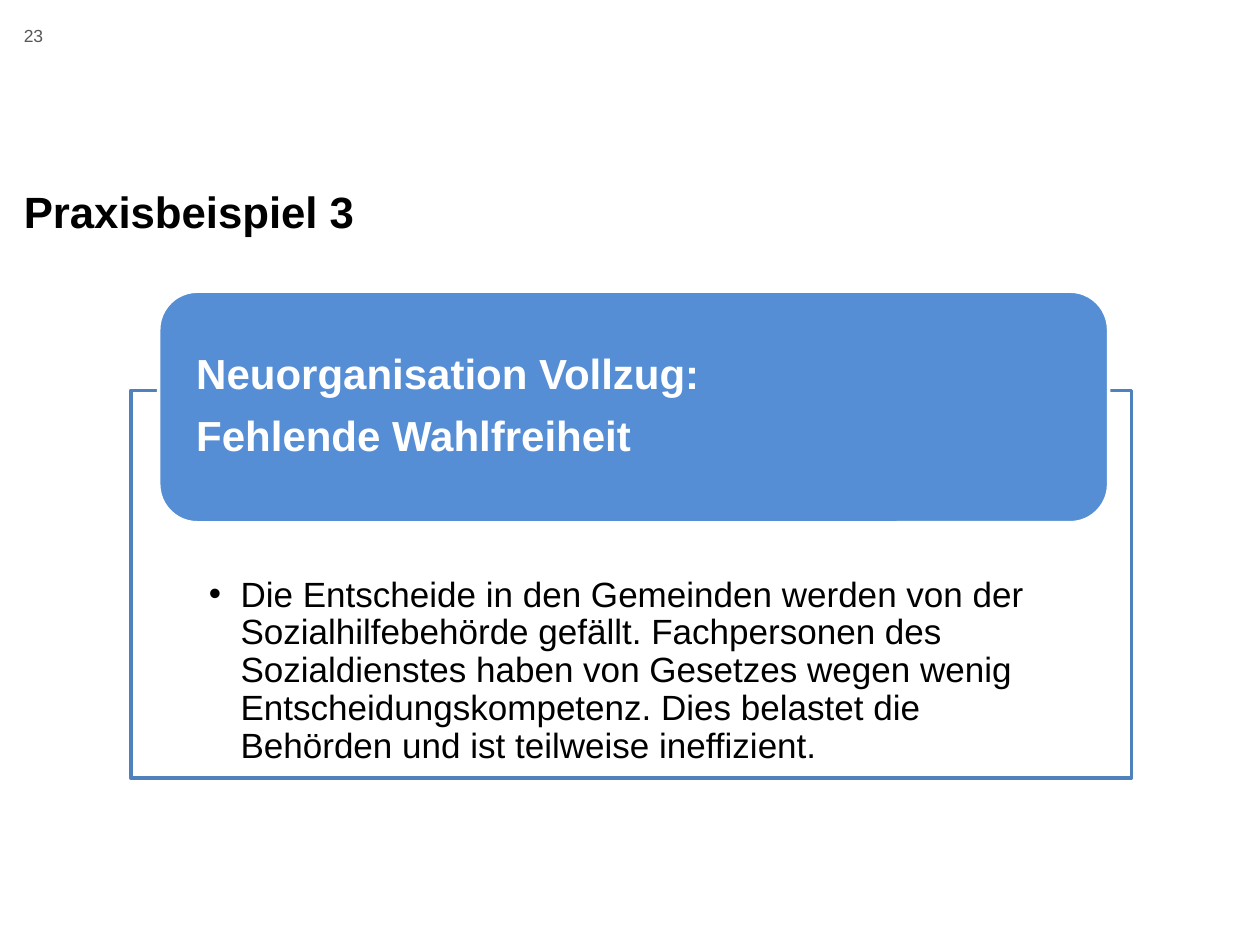
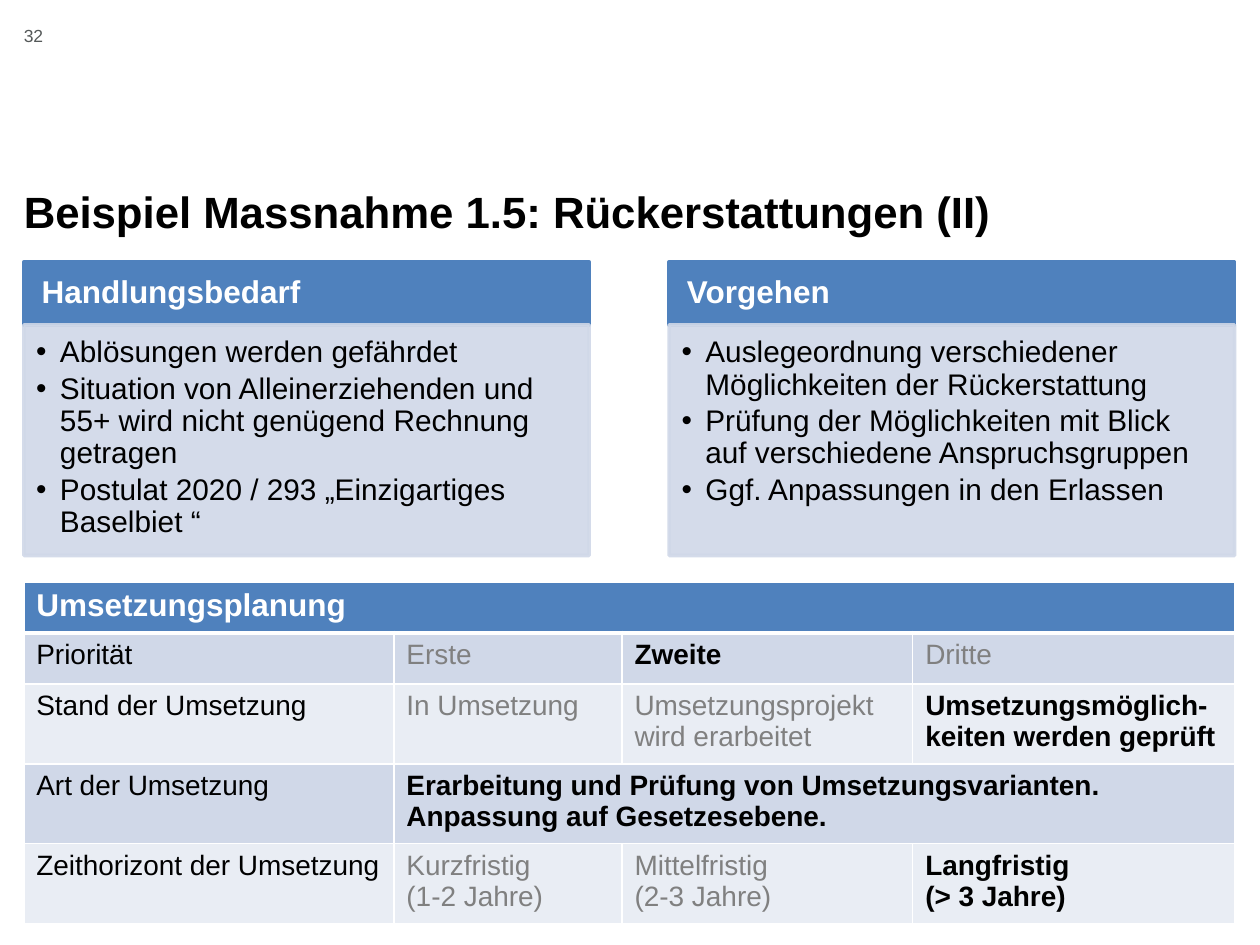
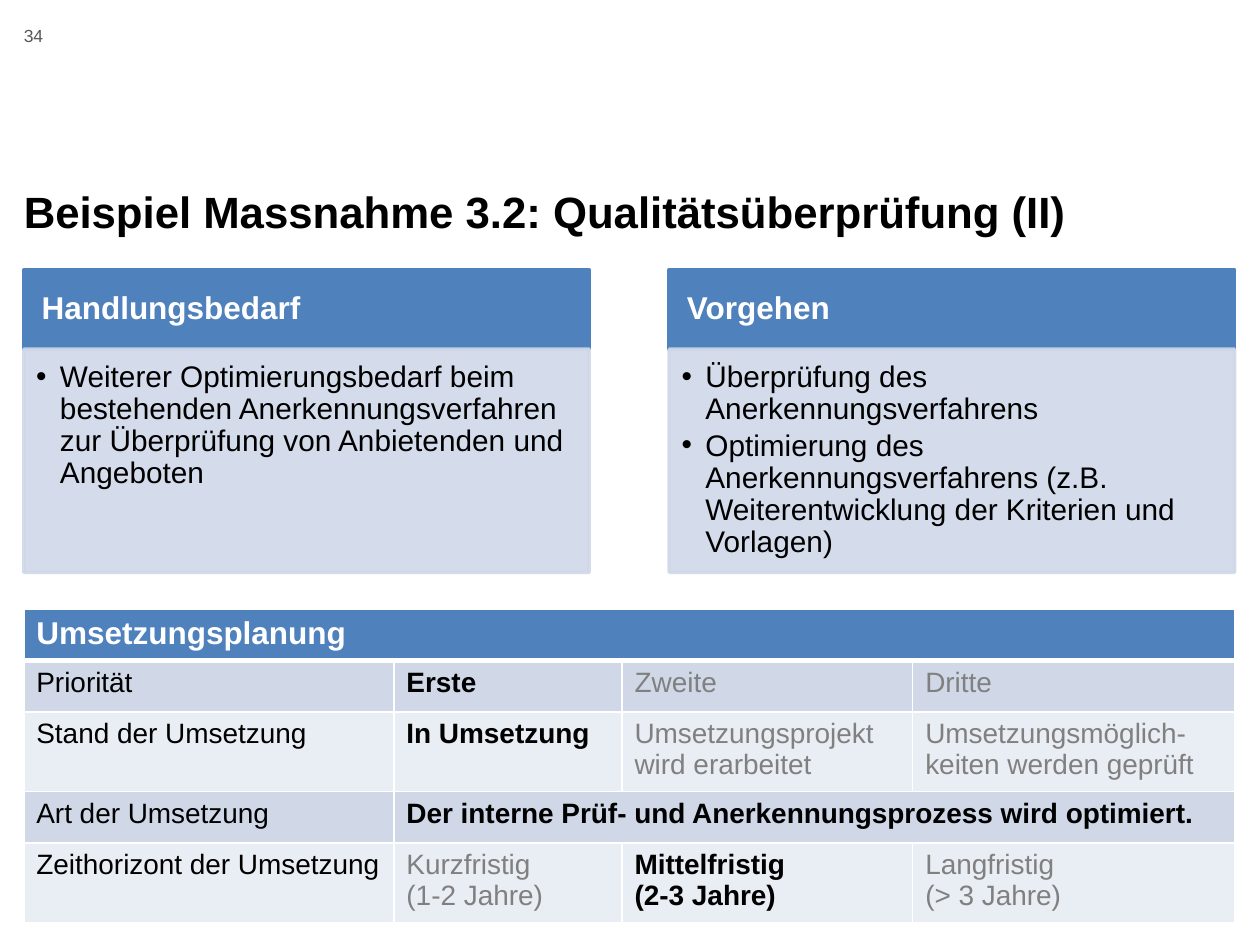
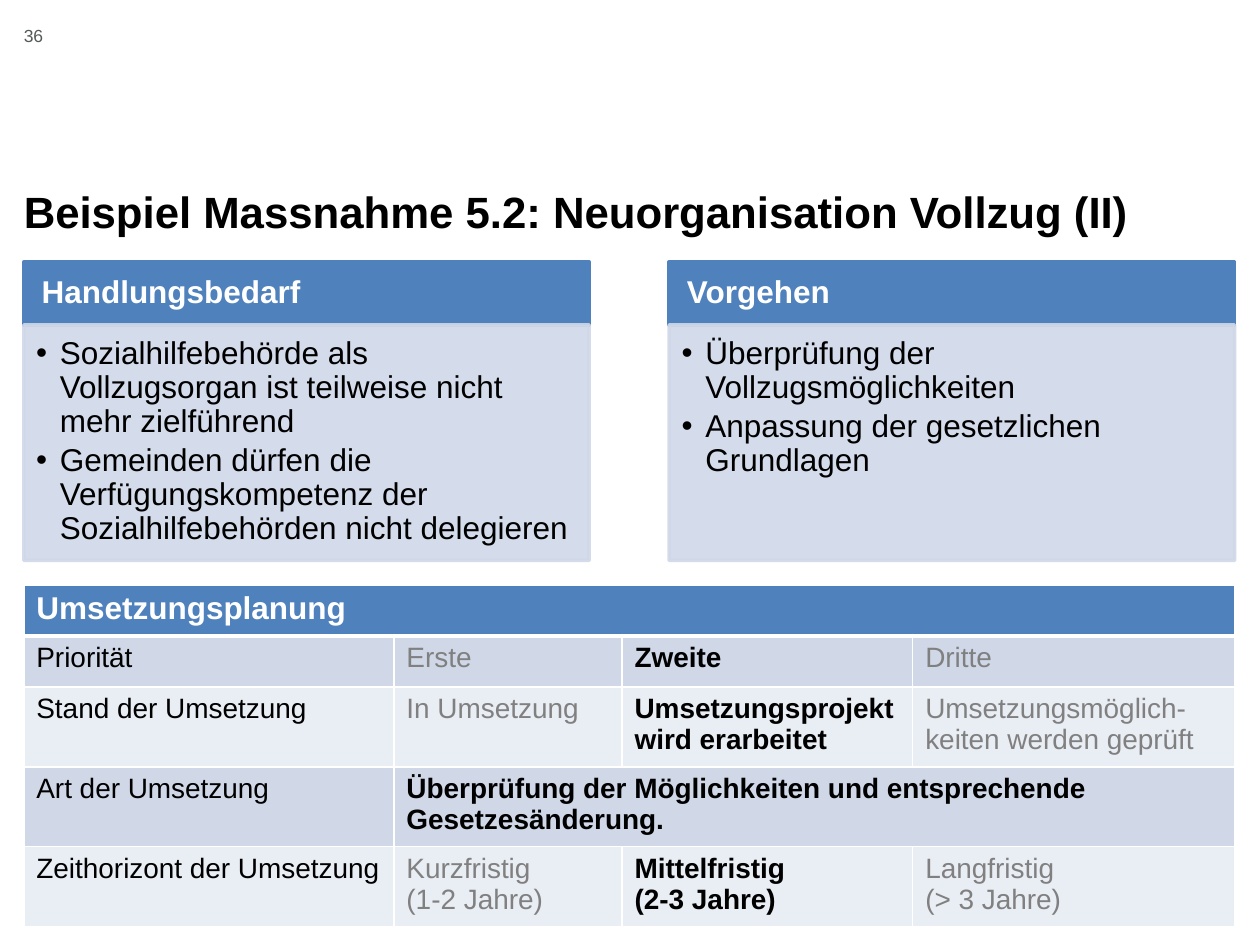
from dataclasses import dataclass
from typing import NamedTuple

from lxml.etree import SubElement
from pptx import Presentation
from pptx.dml.color import RGBColor as RGB
from pptx.enum.shapes import MSO_SHAPE as SHAPE
from pptx.enum.text import MSO_ANCHOR as ANCHOR, PP_ALIGN as ALIGN
from pptx.oxml.ns import qn
from pptx.util import Cm, Pt


@dataclass(frozen=True)
class Theme:
    font: str = "Arial"
    white: str = "FFFFFF"
    black: str = "000000"
    number: str = "555959"
    muted: str = "808080"
    blue: str = "4F81BD"
    bright: str = "558ED5"
    pale: str = "D0D8E8"
    paler: str = "E9EDF4"
    number_size: int = 10
    title_size: int = 25
    topic_size: int = 24
    lead_size: int = 20
    head_size: int = 18
    list_size: int = 17
    cell_size: int = 16
    line: int = 2
    opacity: int = 90


T = Theme()


class Box(NamedTuple):
    x: float
    y: float
    w: float
    h: float

    def emu(self):
        return [Cm(v) for v in self]


NUMBER_BOX = Box(0.48, 0.51, 1.12, 1.02)
TITLE_BOX = Box(0.48, 2.69, 24.41, 2.06)
CONTENT_X, CONTENT_W = TITLE_BOX.x, TITLE_BOX.w
COLUMN_W = 11.4
TABLE_COLS = (7.46, 4.6, 5.86, 6.49)
ROW_H = 1.03
PLAN_ROWS = (
    ("Priorität", ("Erste", "Zweite", "Dritte")),
    ("Stand der Umsetzung", ("In Umsetzung", "Umsetzungsprojekt wird erarbeitet",
                             "Umsetzungsmöglich-keiten werden geprüft")),
    ("Art der Umsetzung", None),
    ("Zeithorizont der Umsetzung", ("Kurzfristig \n(1-2 Jahre)", "Mittelfristig \n(2-3 Jahre)",
                                    "Langfristig \n(> 3 Jahre)")),
)


def set_frame(tf, insets=(0, 0, 0, 0), anchor=ANCHOR.TOP):
    tf.word_wrap = True
    tf.vertical_anchor = anchor
    tf.margin_left, tf.margin_top, tf.margin_right, tf.margin_bottom = map(Cm, insets)


def write(p, text, size, color, bold=False):
    for i, part in enumerate(text.split("\n")):
        if i:
            p.add_line_break()
        r = p.add_run()
        r.text = part
        f = r.font
        f.name, f.size, f.bold = T.font, Pt(size), bold
        f.color.rgb = RGB.from_string(color)


def write_all(tf, texts, size, color, bold=False, spacing=0.9, after=0.0, indent=None):
    for i, text in enumerate(texts):
        p = tf.add_paragraph() if i else tf.paragraphs[0]
        p.alignment = ALIGN.LEFT
        p.line_spacing = spacing
        p.space_after = Pt(size * after)
        if indent:
            add_bullet(p, indent)
        write(p, text, size, color, bold)


def add_bullet(p, indent):
    p.level = 1
    pPr = p._p.get_or_add_pPr()
    pPr.set("marL", str(Cm(indent)))
    pPr.set("indent", str(-Cm(indent)))
    SubElement(pPr, qn("a:buFont")).set("typeface", T.font)
    SubElement(pPr, qn("a:buChar")).set("char", "•")


def add_panel(slide, box, fill, line, shape=SHAPE.RECTANGLE, opacity=100):
    s = slide.shapes.add_shape(shape, *box.emu())
    s.shadow.inherit = False
    s.fill.solid()
    s.fill.fore_color.rgb = RGB.from_string(fill)
    s.line.color.rgb = RGB.from_string(line)
    s.line.width = Pt(T.line)
    if opacity < 100:
        for clr in s.element.spPr.iter(qn("a:srgbClr")):
            if clr.get("val") == fill:
                SubElement(clr, qn("a:alpha")).set("val", str(opacity * 1000))
    return s


def new_slide(prs, number, title):
    slide = prs.slides.add_slide(prs.slide_layouts[6])
    tf = slide.shapes.add_textbox(*NUMBER_BOX.emu()).text_frame
    set_frame(tf)
    write(tf.paragraphs[0], str(number), T.number_size, T.number)
    tf = slide.shapes.add_textbox(*TITLE_BOX.emu()).text_frame
    set_frame(tf, anchor=ANCHOR.BOTTOM)
    write_all(tf, [title], T.title_size, T.black, bold=True, spacing=0.7)
    return slide


def add_topic(slide, box, topic, points):
    body = Box(box.x, box.y + 2, box.w, box.h - 2)
    s = add_panel(slide, body, T.white, T.blue, opacity=T.opacity)
    set_frame(s.text_frame, (1.57, 3.76, 1.57, 0.41))
    write_all(s.text_frame, points, T.lead_size, T.black, after=0.15, indent=0.64)
    head = Box(box.x + 0.56, box.y, 19.15, 4.67)
    s = add_panel(slide, head, T.bright, T.white, SHAPE.ROUNDED_RECTANGLE)
    set_frame(s.text_frame, (0.53, 0, 0.53, 0), ANCHOR.MIDDLE)
    write_all(s.text_frame, topic, T.topic_size, T.white, bold=True, after=0.38)


def add_column(slide, box, head_h, heading, points, size):
    s = add_panel(slide, box._replace(h=head_h), T.blue, T.blue)
    set_frame(s.text_frame, (0.36, 0.2, 0.36, 0.2), ANCHOR.MIDDLE)
    write_all(s.text_frame, [heading], T.head_size, T.white, bold=True)
    body = Box(box.x, box.y + head_h, box.w, box.h - head_h)
    s = add_panel(slide, body, T.pale, T.pale, opacity=T.opacity)
    set_frame(s.text_frame, (0.25, 0.25, 0.33, 0.38))
    write_all(s.text_frame, points, size, T.black, after=0.15, indent=0.48)


def add_columns(slide, box, head_h, needs, steps, size):
    left = box._replace(w=COLUMN_W)
    right = left._replace(x=box.x + box.w - COLUMN_W)
    add_column(slide, left, head_h, "Handlungsbedarf", needs, size)
    add_column(slide, right, head_h, "Vorgehen", steps, size)


def style_cell(cell, fill, top=1, bottom=1):
    tcPr = cell._tc.get_or_add_tcPr()
    for side, width in (("L", 1), ("R", 1), ("T", top), ("B", bottom)):
        ln = SubElement(tcPr, qn(f"a:ln{side}"), w=str(Pt(width)))
        SubElement(SubElement(ln, qn("a:solidFill")), qn("a:srgbClr")).set("val", T.white)
    cell.fill.solid()
    cell.fill.fore_color.rgb = RGB.from_string(fill)


def add_plan(slide, box, chosen, kind):
    rows = len(PLAN_ROWS) + 1
    table = slide.shapes.add_table(rows, len(TABLE_COLS), *box.emu()).table
    for col, width in zip(table.columns, TABLE_COLS):
        col.width = Cm(width)
    for i, row in enumerate(table.rows):
        row.height = Cm(ROW_H)
        fill = T.blue if i == 0 else T.pale if i % 2 else T.paler
        for cell in row.cells:
            style_cell(cell, fill, top=3 if i == 1 else 1, bottom=3 if i == 0 else 1)

    def put(row, col, text, color=T.black, bold=False, size=T.cell_size):
        write(table.cell(row, col).text_frame.paragraphs[0], text, size, color, bold)

    table.cell(0, 0).merge(table.cell(0, 3))
    put(0, 0, "Umsetzungsplanung", T.white, True, T.head_size)
    picks = iter(chosen)
    for i, (label, options) in enumerate(PLAN_ROWS, 1):
        put(i, 0, label)
        if options is None:
            table.cell(i, 1).merge(table.cell(i, 3))
            put(i, 1, kind, bold=True)
            continue
        pick = next(picks)
        for j, option in enumerate(options, 1):
            put(i, j, option, T.black if j == pick else T.muted, j == pick)


def measure_slide(prs, number, title, top, head_h, body_h, needs, steps,
                  plan_top, chosen, kind, size=T.list_size):
    slide = new_slide(prs, number, title)
    rows = len(PLAN_ROWS) + 1
    add_plan(slide, Box(CONTENT_X, plan_top, CONTENT_W, rows * ROW_H), chosen, kind)
    add_columns(slide, Box(CONTENT_X, top, CONTENT_W, head_h + body_h), head_h, needs, steps, size)


def main():
    prs = Presentation()
    prs.slide_width, prs.slide_height = Cm(25.4), Cm(19.05)

    slide = new_slide(prs, 23, "Praxisbeispiel 3")
    add_topic(
        slide, Box(2.64, 5.87, 20.17, 9.82),
        ["Neuorganisation Vollzug:", "Fehlende Wahlfreiheit"],
        ["Die Entscheide in den Gemeinden werden von der Sozialhilfebehörde gefällt. "
         "Fachpersonen des Sozialdienstes haben von Gesetzes wegen wenig "
         "Entscheidungskompetenz. Dies belastet die Behörden und ist teilweise ineffizient."])

    measure_slide(
        prs, 32, "Beispiel Massnahme 1.5: Rückerstattungen (II)",
        top=5.28, head_h=1.27, body_h=4.65,
        needs=["Ablösungen werden gefährdet",
               "Situation von Alleinerziehenden und 55+ wird nicht genügend Rechnung getragen",
               "Postulat 2020 / 293 „Einzigartiges Baselbiet “"],
        steps=["Auslegeordnung verschiedener Möglichkeiten der Rückerstattung",
               "Prüfung der Möglichkeiten mit Blick auf verschiedene Anspruchsgruppen",
               "Ggf. Anpassungen in den Erlassen"],
        plan_top=11.73, chosen=(2, 3, 3),
        kind="Erarbeitung und Prüfung von Umsetzungsvarianten. Anpassung auf Gesetzesebene.")

    measure_slide(
        prs, 34, "Beispiel Massnahme 3.2: Qualitätsüberprüfung (II)",
        top=5.44, head_h=1.6, body_h=4.5,
        needs=["Weiterer Optimierungsbedarf beim bestehenden Anerkennungsverfahren "
               "zur Überprüfung von Anbietenden und Angeboten"],
        steps=["Überprüfung des Anerkennungsverfahrens",
               "Optimierung des Anerkennungsverfahrens "
               "(z.B. Weiterentwicklung der Kriterien und Vorlagen)"],
        plan_top=12.29, chosen=(1, 1, 2),
        kind="Der interne Prüf- und Anerkennungsprozess wird optimiert.")

    measure_slide(
        prs, 36, "Beispiel Massnahme 5.2: Neuorganisation Vollzug (II)",
        top=5.28, head_h=1.27, body_h=4.75,
        needs=["Sozialhilfebehörde als Vollzugsorgan ist teilweise nicht mehr zielführend",
               "Gemeinden dürfen die Verfügungskompetenz der Sozialhilfebehörden nicht delegieren"],
        steps=["Überprüfung der Vollzugsmöglichkeiten",
               "Anpassung der gesetzlichen Grundlagen"],
        plan_top=11.79, chosen=(2, 2, 2),
        kind="Überprüfung der Möglichkeiten und entsprechende Gesetzesänderung.",
        size=T.head_size)

    prs.save("out.pptx")


if __name__ == "__main__":
    main()
